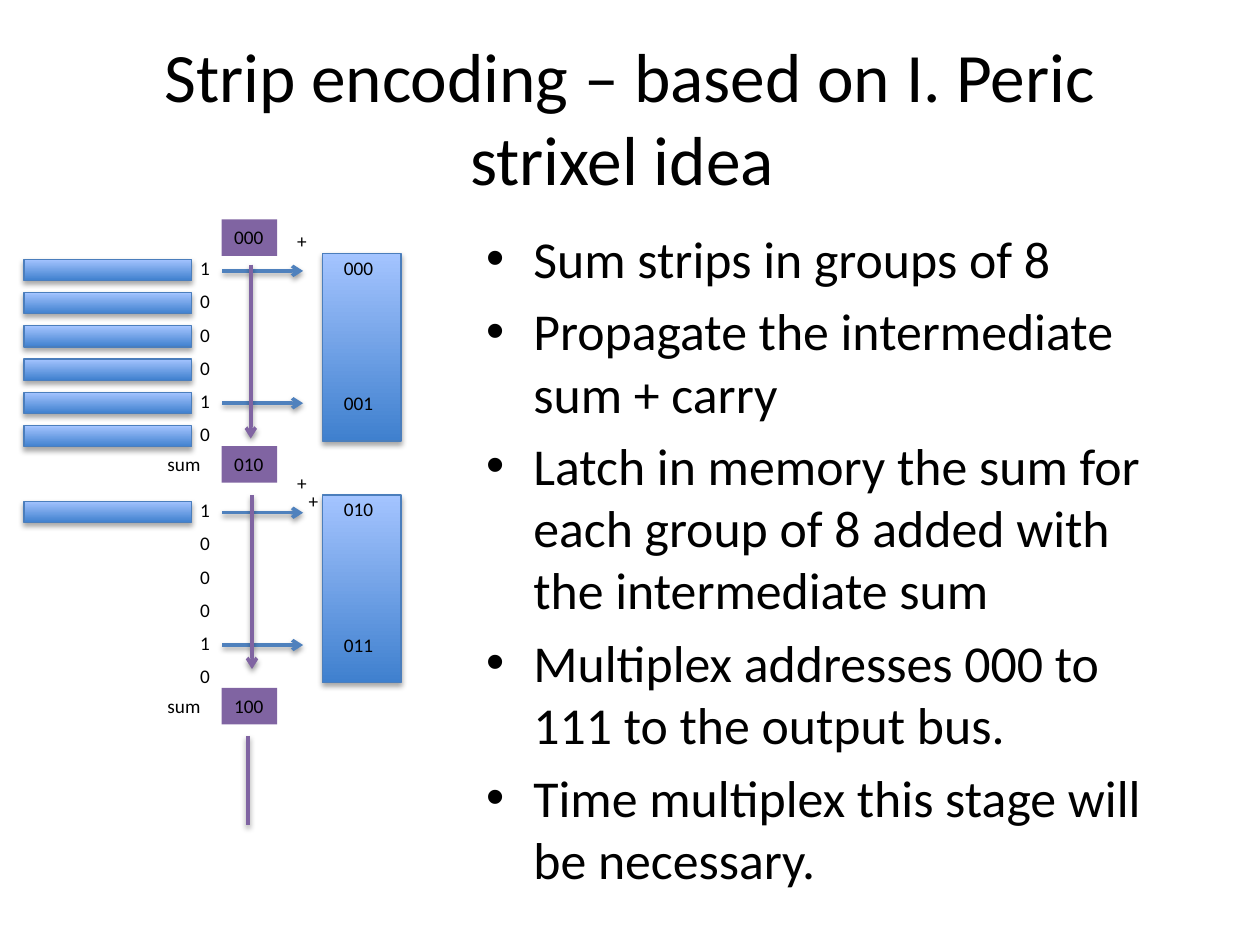
"""Build the strip encoding slide: a two-stage adder diagram beside its key points."""
from lxml.etree import SubElement
from pptx import Presentation
from pptx.dml.color import RGBColor
from pptx.enum.shapes import MSO_CONNECTOR, MSO_SHAPE
from pptx.enum.text import MSO_ANCHOR, MSO_AUTO_SIZE, PP_ALIGN
from pptx.oxml.ns import qn
from pptx.util import Pt

BLACK = RGBColor(0x00, 0x00, 0x00)
DEEP_BLUE = RGBColor(0x3F, 0x80, 0xCE)
PALE_BLUE = RGBColor(0xA4, 0xC4, 0xFF)
EDGE_BLUE = RGBColor(0x4B, 0x7E, 0xBC)
ARROW_BLUE = RGBColor(0x4F, 0x81, 0xBD)
PURPLE = RGBColor(0x80, 0x64, 0xA2)

STAGE_PITCH = 138.2
STRIP_PITCH = 19
LABEL_HEIGHT = 20.9
BITS = "100010"
STAGES = [
    {"strips": 6, "words": ("000", "001"), "sum": "010"},
    {"strips": 1, "words": ("010", "011"), "sum": "100"},
]
POINTS = [
    "Sum strips in groups of 8",
    "Propagate the intermediate sum + carry",
    "Latch in memory the sum for each group of 8 added with the intermediate sum",
    "Multiplex addresses 000 to 111 to the output bus.",
    "Time multiplex this stage will be necessary.",
]


def write_text(frame, *lines, size=11, align=PP_ALIGN.LEFT, anchor=MSO_ANCHOR.TOP,
               wrap=False, bullet=False, gap=0):
    frame.word_wrap = wrap
    frame.auto_size = MSO_AUTO_SIZE.NONE if wrap else MSO_AUTO_SIZE.SHAPE_TO_FIT_TEXT
    frame.vertical_anchor = anchor
    for index, line in enumerate(lines):
        paragraph = frame.add_paragraph() if index else frame.paragraphs[0]
        paragraph.alignment = align
        paragraph.space_before = Pt(gap if index else 0)
        if bullet:
            properties = paragraph._p.get_or_add_pPr()
            properties.set("marL", str(Pt(27)))
            properties.set("indent", str(Pt(-27)))
            SubElement(properties, qn("a:buFont"), typeface="Arial")
            SubElement(properties, qn("a:buChar"), char="•")
        run = paragraph.add_run()
        run.text = line
        run.font.name = "Calibri"
        run.font.size = Pt(size)
        run.font.color.rgb = BLACK


def add_text(slide, left, top, width, height, *lines, **text_format):
    box = slide.shapes.add_textbox(Pt(left), Pt(top), Pt(width), Pt(height))
    write_text(box.text_frame, *lines, **text_format)


def add_label(slide, left, top, text, width=20.2):
    add_text(slide, left, top, width, LABEL_HEIGHT, text)


def add_shadow(element, distance, opacity):
    effects = SubElement(element.spPr, qn("a:effectLst"))
    shadow = SubElement(effects, qn("a:outerShdw"), blurRad=str(Pt(3.1)),
                        dist=str(Pt(distance)), dir="5400000", rotWithShape="0")
    color = SubElement(shadow, qn("a:srgbClr"), val=str(BLACK))
    SubElement(color, qn("a:alpha"), val=str(opacity * 1000))


def add_block(slide, left, top, width, height):
    block = slide.shapes.add_shape(MSO_SHAPE.RECTANGLE, Pt(left), Pt(top), Pt(width), Pt(height))
    block.fill.gradient()
    block.fill.gradient_angle = 90
    for stop, color in zip(block.fill.gradient_stops, (DEEP_BLUE, PALE_BLUE)):
        stop.color.rgb = color
    block.line.color.rgb = EDGE_BLUE
    block.line.width = Pt(0.75)
    add_shadow(block._element, 1.8, 35)


def add_sum_box(slide, top, value):
    box = slide.shapes.add_shape(MSO_SHAPE.RECTANGLE, Pt(126.7), Pt(top), Pt(31.7), Pt(LABEL_HEIGHT))
    box.shadow.inherit = False
    box.fill.solid()
    box.fill.fore_color.rgb = PURPLE
    box.line.fill.background()
    write_text(box.text_frame, value)


def add_line(slide, start, end, color, arrow=True):
    line = slide.shapes.add_connector(MSO_CONNECTOR.STRAIGHT, *map(Pt, start + end))
    line.line.color.rgb = color
    line.line.width = Pt(2)
    if arrow:
        SubElement(line.line._get_or_add_ln(), qn("a:tailEnd"), type="arrow")
    add_shadow(line._element, 1.6, 38)


def add_stage(slide, offset, stage):
    add_block(slide, 184.3, 144.7 + offset, 44.9, 107.3)
    for row in range(stage["strips"]):
        add_block(slide, 13.7, 148.2 + offset + row * STRIP_PITCH, 95.8, 12.2)
    for row, bit in enumerate(BITS):
        add_label(slide, 107.3, 143 + offset + row * STRIP_PITCH, bit)
    add_sum_box(slide, 254.9 + offset, stage["sum"])
    add_label(slide, 88.6, 254.9 + offset, "sum", width=33.8)
    for word, word_top, arrow_top in zip(stage["words"], (142.6, 220), (154.8, 230.4)):
        add_label(slide, 189.4, word_top + offset, word, width=31.7)
        add_line(slide, (127, arrow_top + offset), (173.2, arrow_top + offset), ARROW_BLUE)
    add_label(slide, 162.7, 127.4 + offset, "+")


def main():
    presentation = Presentation()
    presentation.slide_width, presentation.slide_height = Pt(720), Pt(540)
    slide = presentation.slides.add_slide(presentation.slide_layouts[6])
    add_text(slide, 36, 21.6, 648, 90, "Strip encoding – based on I. Peric strixel idea ",
             size=39.6, align=PP_ALIGN.CENTER, anchor=MSO_ANCHOR.MIDDLE, wrap=True)
    add_text(slide, 270.7, 126, 413.3, 356.4, *POINTS, size=29.6, wrap=True, bullet=True, gap=5.9)
    add_sum_box(slide, 125.3, "000")
    for index, stage in enumerate(STAGES):
        add_stage(slide, index * STAGE_PITCH, stage)
    add_label(slide, 169.2, 275.8, "+")
    add_line(slide, (143.3, 151.2), (143.3, 250.6), PURPLE)
    add_line(slide, (144, 283), (144, 382.3), PURPLE)
    add_line(slide, (141.8, 420.5), (141.8, 471.6), PURPLE, arrow=False)
    presentation.save("out.pptx")


if __name__ == "__main__":
    main()
